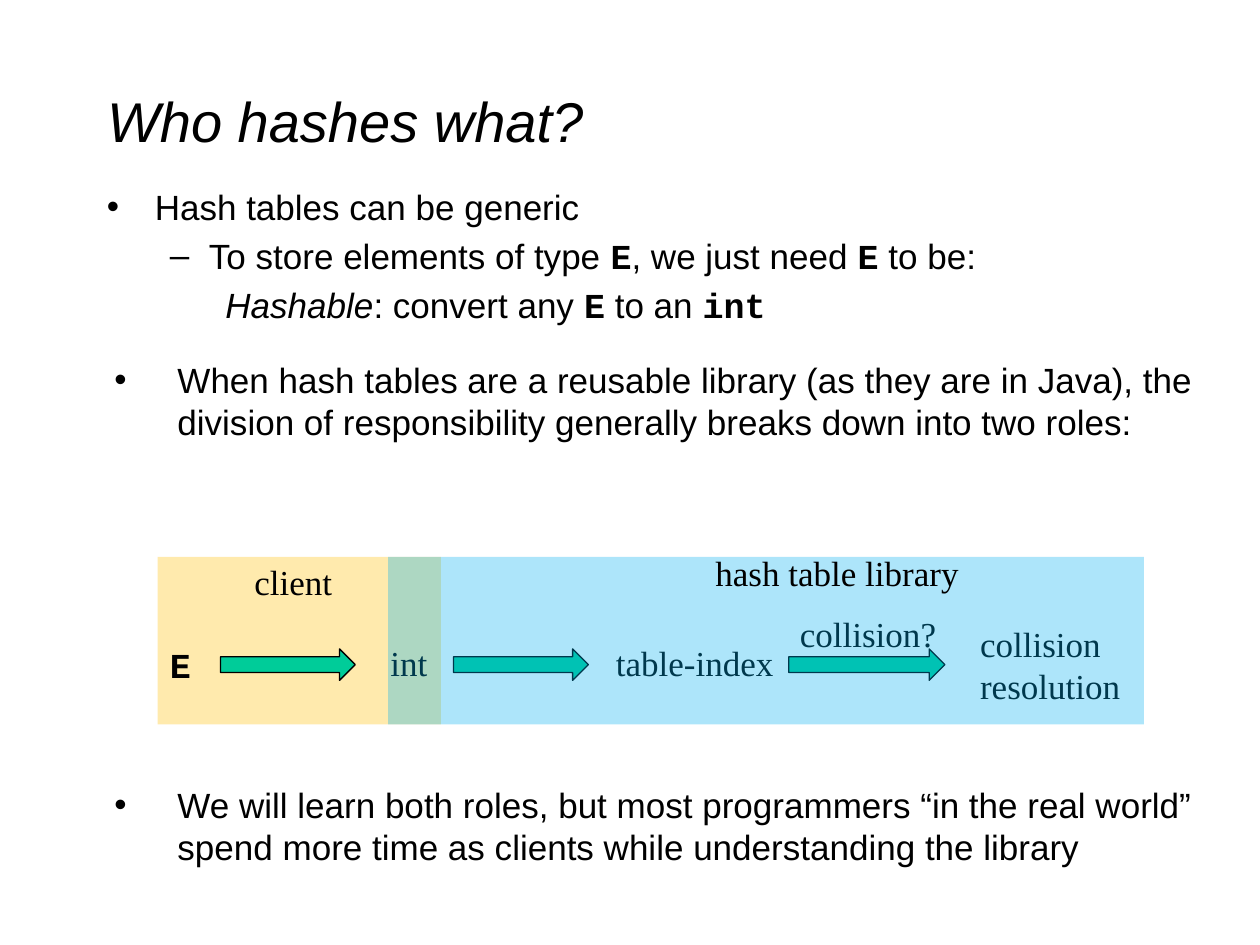
from dataclasses import dataclass

from lxml.etree import SubElement
from pptx import Presentation
from pptx.dml.color import RGBColor
from pptx.enum.shapes import MSO_SHAPE
from pptx.enum.text import MSO_ANCHOR, MSO_AUTO_SIZE, PP_ALIGN
from pptx.oxml.ns import qn
from pptx.util import Emu, Pt

EMU_PER_PX = 9144  # 100 px to the inch

BLACK = RGBColor(0x00, 0x00, 0x00)
ARROW_GREEN = RGBColor(0x00, 0xCC, 0x99)
CLIENT_AMBER = RGBColor(0xFF, 0xC0, 0x00)
LIBRARY_BLUE = RGBColor(0x00, 0xB0, 0xF0)

SANS, MONO, SERIF = "Arial", "Courier New", "Times New Roman"
TEXT_SIZE = 20
ROLE_OPACITY = 32  # percent


@dataclass(frozen=True)
class Span:
    text: str
    font: str = SANS
    bold: bool = False
    italic: bool = False


@dataclass(frozen=True)
class Point:
    spans: tuple[Span, ...]
    margin: int
    indent: int
    bullet: str = ""
    level: int = 0
    space_before: int = 4


@dataclass(frozen=True)
class Box:
    left: int
    top: int
    width: int
    height: int

    def emu(self) -> tuple[Emu, ...]:
        return tuple(px(n) for n in (self.left, self.top, self.width, self.height))


@dataclass(frozen=True)
class Label:
    text: str
    box: Box
    font: str = SERIF
    bold: bool = False


def px(length: int) -> Emu:
    return Emu(length * EMU_PER_PX)


def style_font(font, name: str, size: int, bold=False, italic=False) -> None:
    font.name, font.size = name, Pt(size)
    font.bold, font.italic = bold, italic
    font.color.rgb = BLACK


def add_points(slide, box: Box, points: tuple[Point, ...]) -> None:
    frame = slide.shapes.add_textbox(*box.emu()).text_frame
    frame.word_wrap = True
    for number, point in enumerate(points):
        paragraph = frame.add_paragraph() if number else frame.paragraphs[0]
        paragraph.level = point.level
        paragraph.space_before = Pt(point.space_before)
        properties = paragraph._p.get_or_add_pPr()
        properties.set("marL", str(px(point.margin)))
        properties.set("indent", str(px(point.indent)))
        if point.bullet:
            SubElement(properties, qn("a:buFont"), typeface=SANS)
            SubElement(properties, qn("a:buChar"), char=point.bullet)
        else:
            SubElement(properties, qn("a:buNone"))
        for span in point.spans:
            run = paragraph.add_run()
            run.text = span.text
            style_font(run.font, span.font, TEXT_SIZE, span.bold, span.italic)


def add_label(slide, label: Label) -> None:
    frame = slide.shapes.add_textbox(*label.box.emu()).text_frame
    frame.text = label.text
    frame.word_wrap = False
    frame.auto_size = MSO_AUTO_SIZE.SHAPE_TO_FIT_TEXT
    for paragraph in frame.paragraphs:
        style_font(paragraph.runs[0].font, label.font, TEXT_SIZE, label.bold)


def add_arrow(slide, left: int, width: int) -> None:
    box = Box(left, 515, width, 25)
    arrow = slide.shapes.add_shape(MSO_SHAPE.RIGHT_ARROW, *box.emu())
    arrow.shadow.inherit = False
    arrow.fill.solid()
    arrow.fill.fore_color.rgb = ARROW_GREEN
    arrow.line.color.rgb = BLACK
    arrow.line.width = Pt(0.75)


def add_role_area(slide, left: int, width: int, color: RGBColor) -> None:
    box = Box(left, 442, width, 133)
    area = slide.shapes.add_shape(MSO_SHAPE.RECTANGLE, *box.emu())
    area.shadow.inherit = False
    area.fill.solid()
    area.fill.fore_color.rgb = color
    area.line.fill.background()
    tint = area._element.spPr.find(qn("a:solidFill")).find(qn("a:srgbClr"))
    SubElement(tint, qn("a:alpha"), val=str(ROLE_OPACITY * 1000))


ELEMENT = Span("E", MONO, bold=True)

REQUIREMENTS = (
    Point((Span("Hash tables can be generic"),), 38, -38, "•"),
    Point(
        (Span("To store elements of type "), ELEMENT, Span(", we just need "),
         ELEMENT, Span(" to be:")),
        81, -31, "–", level=1,
    ),
    Point(
        (Span("Hashable", italic=True), Span(": convert any "), ELEMENT,
         Span(" to an "), Span("int", MONO, bold=True)),
        94, 0, level=2,
    ),
    Point(
        (Span("When hash tables are a reusable library (as they are in Java), "
              "the division of responsibility generally breaks down into two roles:"),),
        56, -50, "•", space_before=19,
    ),
)

CONCLUSION = (
    Point(
        (Span("We will learn both roles, but most programmers “in the real world” "
              "spend more time as clients while understanding the library"),),
        56, -50, "•",
    ),
)

PIPELINE_LABELS = (
    Label("E", Box(125, 506, 37, 44), MONO, bold=True),
    Label("int", Box(300, 504, 50, 44)),
    Label("table-index", Box(479, 504, 146, 44)),
    Label("collision?", Box(625, 481, 129, 44)),
    Label("collision\nresolution", Box(768, 489, 132, 77)),
    Label("client", Box(192, 440, 82, 44)),
)
LIBRARY_LABEL = Label("hash table library", Box(558, 433, 214, 44))
ARROWS = ((175, 107), (360, 107), (626, 124))  # left, width


def main() -> None:
    deck = Presentation()
    deck.slide_width, deck.slide_height = px(1000), px(750)
    slide = deck.slides.add_slide(deck.slide_layouts[5])

    # Title
    title = slide.shapes.title
    title.left, title.top, title.width, title.height = Box(75, 33, 850, 125).emu()
    title.text_frame.text = "Who hashes what?"
    title.text_frame.vertical_anchor = MSO_ANCHOR.MIDDLE
    title.text_frame.auto_size = MSO_AUTO_SIZE.NONE
    heading = title.text_frame.paragraphs[0]
    heading.alignment = PP_ALIGN.LEFT
    style_font(heading.runs[0].font, SANS, 32, italic=True)

    # Bulleted text above and below the diagram
    add_points(slide, Box(75, 142, 892, 275), REQUIREMENTS)
    add_points(slide, Box(75, 617, 892, 75), CONCLUSION)

    # Pipeline from element to table, with the library area tinting its part
    add_role_area(slide, 125, 225, CLIENT_AMBER)
    for left, width in ARROWS:
        add_arrow(slide, left, width)
    for label in PIPELINE_LABELS:
        add_label(slide, label)
    add_role_area(slide, 308, 600, LIBRARY_BLUE)
    add_label(slide, LIBRARY_LABEL)

    deck.save("out.pptx")


if __name__ == "__main__":
    main()
